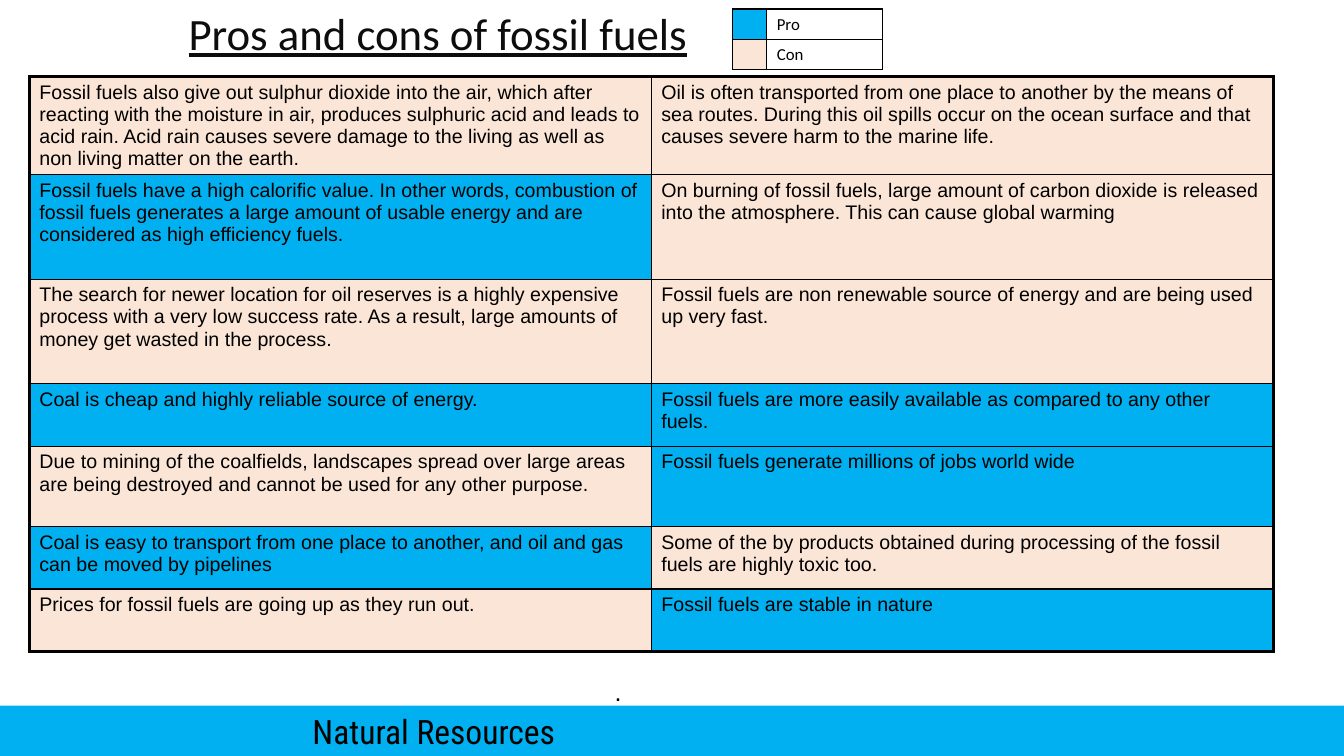
from lxml import etree
from pptx import Presentation
from pptx import util as u
from pptx.dml.color import RGBColor
from pptx.enum import shapes, text
from pptx.oxml import ns

COLORS = {"pro": "00B0F0", "con": "FBE5D6", "ink": "000000", "title": "0D0D0D", "paper": "FFFFFF"}

ARGUMENTS = [
    (11.6, ("con", "Fossil fuels also give out sulphur dioxide into the air, which after reacting with the moisture in air, produces sulphuric acid and leads to acid rain. Acid rain causes severe damage to the living as well as non living matter on the earth."),
     ("con", "Oil is often transported from one place to another by the means of sea routes. During this oil spills occur on the ocean surface and that causes severe harm to the marine life.")),
    (13.8, ("pro", "Fossil fuels have a high calorific value. In other words, combustion of fossil fuels generates a large amount of usable energy and are considered as high efficiency fuels."),
     ("con", "On burning of fossil fuels, large amount of carbon dioxide is released into the atmosphere. This can cause global warming")),
    (13.8, ("con", "The search for newer location for oil reserves is a highly expensive process with a very low success rate. As a result, large amounts of money get wasted in the process."),
     ("con", "Fossil fuels are non renewable source of energy and are being used up very fast.")),
    (8.3, ("pro", "Coal is cheap and highly reliable source of energy."),
     ("pro", "Fossil fuels are more easily available as compared to any other fuels.")),
    (10.6, ("con", "Due to mining of the coalfields, landscapes spread over large areas are being destroyed and cannot be used for any other purpose."),
     ("pro", "Fossil fuels generate millions of jobs world wide")),
    (8.3, ("pro", "Coal is easy to transport from one place to another, and oil and gas can be moved by pipelines"),
     ("con", "Some of the by products obtained during processing of the fossil fuels are highly toxic too.")),
    (8.3, ("con", "Prices for fossil fuels are going up as they run out."),
     ("pro", "Fossil fuels are stable in nature")),
]
LEGEND = [
    (4, ("pro", ""), ("paper", "Pro")),
    (4, ("con", ""), ("paper", "Con")),
]


class SlideBuilder:
    """Draws styled elements on one slide, with lengths in percent of its size."""

    def __init__(self, presentation):
        self.presentation = presentation
        self.slide = presentation.slides.add_slide(presentation.slide_layouts[5])

    def across(self, share):
        return round(self.presentation.slide_width * share / 100)

    def down(self, share):
        return round(self.presentation.slide_height * share / 100)

    def box(self, left, top, width, height):
        return self.across(left), self.down(top), self.across(width), self.down(height)

    def add_words(self, frame, words, size, font, color="ink", underline=None):
        frame.word_wrap = True
        paragraph = frame.paragraphs[0]
        paragraph.alignment = text.PP_ALIGN.LEFT
        run = paragraph.add_run()
        run.text = words
        run.font.size = u.Pt(size)
        run.font.name = font
        run.font.underline = underline
        run.font.color.rgb = RGBColor.from_string(COLORS[color])
        return paragraph

    def title(self, words, area):
        shape = self.slide.shapes.title
        shape.left, shape.top, shape.width, shape.height = self.box(*area)
        shape.text_frame.vertical_anchor = text.MSO_ANCHOR.MIDDLE
        paragraph = self.add_words(shape.text_frame, words, 32, "Calibri", "title", True)
        paragraph.line_spacing = 0.9

    def band(self, words, area, indent):
        shape = self.slide.shapes.add_shape(shapes.MSO_SHAPE.RECTANGLE, *self.box(*area))
        shape.shadow.inherit = False
        shape.fill.solid()
        shape.fill.fore_color.rgb = RGBColor.from_string(COLORS["pro"])
        shape.line.fill.background()
        shape.text_frame.margin_left = self.across(indent)
        shape.text_frame.vertical_anchor = text.MSO_ANCHOR.MIDDLE
        self.add_words(shape.text_frame, words, 24, "Roboto Condensed")

    def label(self, words, area):
        shape = self.slide.shapes.add_textbox(*self.box(*area))
        self.add_words(shape.text_frame, words, 18, "Arial")

    def border(self, cell, side, points):
        line = etree.SubElement(cell._tc.get_or_add_tcPr(), ns.qn(f"a:ln{side}"), w=str(u.Pt(points)))
        fill = etree.SubElement(line, ns.qn("a:solidFill"))
        etree.SubElement(fill, ns.qn("a:srgbClr"), val=COLORS["ink"])

    def table(self, rows, left, top, widths, size, font, edge):
        height = sum(row[0] for row in rows)
        area = self.box(left, top, sum(widths), height)
        table = self.slide.shapes.add_table(len(rows), len(widths), *area).table
        table.first_row = table.horz_banding = False
        for column, width in zip(table.columns, widths):
            column.width = self.across(width)
        for r, (row_height, *entries) in enumerate(rows):
            table.rows[r].height = self.down(row_height)
            for c, (color, words) in enumerate(entries):
                cell = table.cell(r, c)
                outer = {"L": c == 0, "R": c == len(widths) - 1, "T": r == 0, "B": r == len(rows) - 1}
                for side, is_outer in outer.items():
                    self.border(cell, side, edge if is_outer else 1)
                cell.fill.solid()
                cell.fill.fore_color.rgb = RGBColor.from_string(COLORS[color])
                if words:
                    self.add_words(cell.text_frame, words, size, font)
                else:
                    etree.SubElement(cell.text_frame.paragraphs[0]._p, ns.qn("a:endParaRPr"), sz=str(size * 100))


def main():
    presentation = Presentation()
    presentation.slide_width = u.Inches(13.33)
    presentation.slide_height = u.Inches(7.5)
    builder = SlideBuilder(presentation)
    builder.band("Natural Resources", (0, 93.33, 100, 6.67), 23.25)
    builder.title("Pros and cons of fossil fuels", (13.28, 1.2, 75, 7.2))
    builder.table(ARGUMENTS, 2.18, 10.13, (46.28, 46.28), 14, "Arial", 2.25)
    builder.label(".", (45, 88.8, 55, 5.33))
    builder.table(LEGEND, 54.5, 1.2, (2.55, 8.63), 12, "Calibri", 1)
    presentation.save("out.pptx")


if __name__ == "__main__":
    main()
